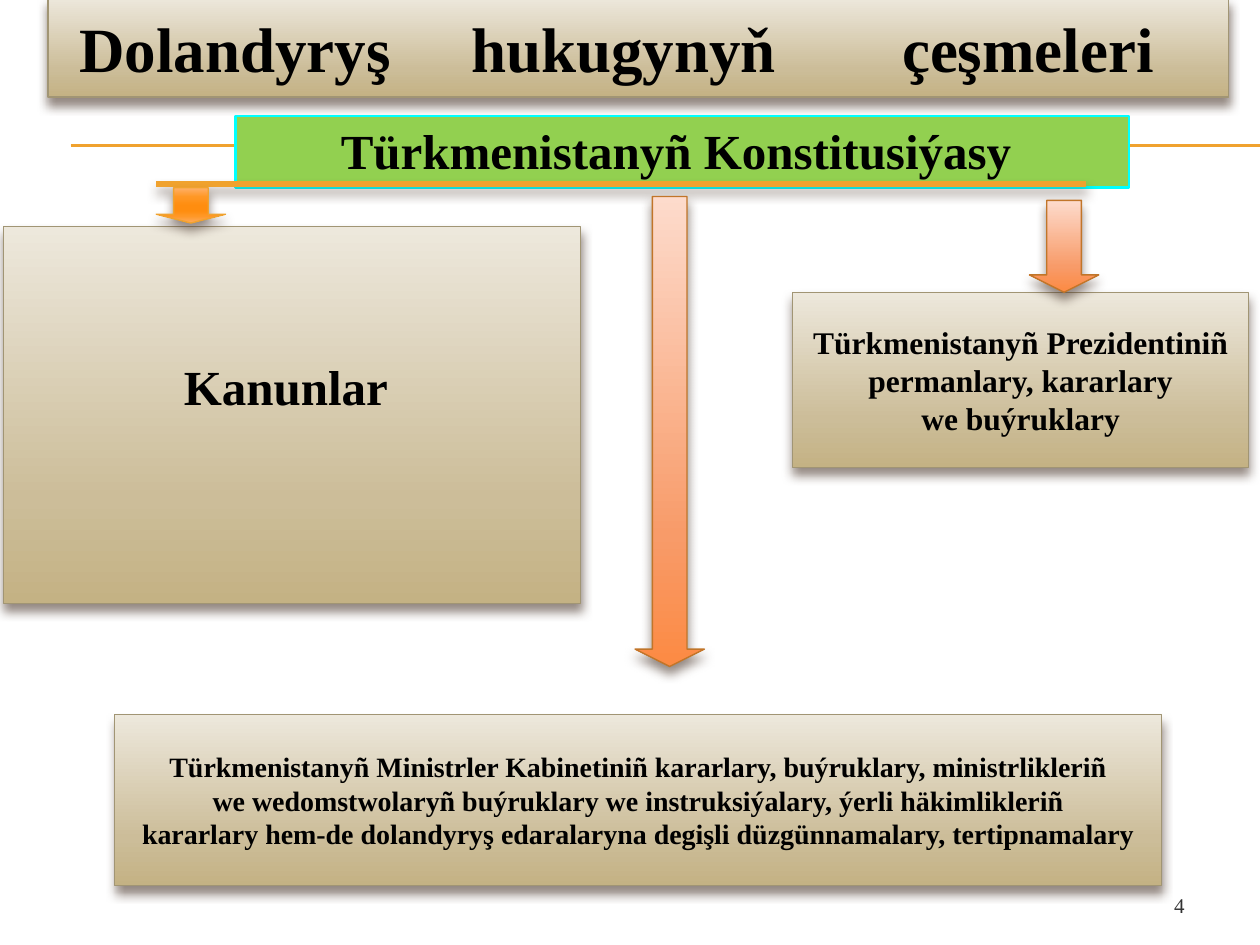
from lxml import etree
from pptx import Presentation
from pptx.dml.color import RGBColor
from pptx.enum import shapes, text
from pptx.oxml.ns import qn
from pptx.util import Inches, Pt

FONT = "Times New Roman"
COLORS = {"ink": "000000", "page": "333333", "gold": "F0A22E", "tan": "A19574",
          "rust": "C17529", "green": "92D050", "cyan": "00FFFF", "shade": "4E3B30"}
GRADS = {
    "sand": [(0, "EDE8DC"), (72, "CCBD99"), (100, "C4B284")],
    "peach": [(0, "FDDBCC"), (72, "F89B69"), (100, "FC8A43")],
    "amber": [(0, "FFB16A"), (25, "FF9826"), (50, "FF8D0F"),
              (65, "FF8D0F"), (80, "FF9724"), (100, "FFAA5C")],
}

TITLE = "Dolandyryş\thukugynyň\tçeşmeleri"
TITLE_BOX = (0.38, -0.02, 9.37, 0.79)
TABS = (3.11, 6.53)
HEAD = "Türkmenistanyñ Konstitusiýasy"
HEAD_BOX = (1.87, 0.92, 7.09, 0.57)
# place, size, right inset, bottom inset, lines
BOXES = [
    ((0.03, 1.8, 4.58, 2.99), 28, 0.2, 0.52, ["Kanunlar"]),
    ((6.29, 2.32, 3.62, 1.39), 18, 0.1, 0.05,
     ["Türkmenistanyñ Prezidentiniñ", "permanlary, kararlary", "we buýruklary"]),
    ((0.91, 5.67, 8.31, 1.36), 16, 0.1, 0.05,
     ["Türkmenistanyñ Ministrler Kabinetiniñ kararlary, buýruklary, ministrlikleriñ",
      "we wedomstwolaryñ buýruklary we instruksiýalary, ýerli häkimlikleriñ",
      "kararlary hem-de dolandyryş edaralaryna degişli düzgünnamalary, tertipnamalary"]),
]
# left, top, height, gradient, line colour
ARROWS = [(5.04, 1.56, 3.73, "peach", "rust"),
          (1.24, 1.49, 0.28, "amber", "gold"),
          (8.17, 1.59, 0.73, "peach", "rust")]
ARROW_W = 0.55
# start x, end x, y, width, shadow
RULES = [(0.56, 10, 1.15, 0.75, False), (0.56, 10, 1.16, 0.75, False)]
BAR = (1.24, 8.62, 1.46, 3, True)


def color(name):
    return RGBColor.from_string(COLORS[name])


def child(node, tag, **attrs):
    return etree.SubElement(node, qn(tag), {k: str(v) for k, v in attrs.items()})


def effect(shape, shadow):
    """Give the shape a soft shadow below it, or none."""
    props = shape._element.spPr
    for old in props.findall(qn("a:effectLst")):
        props.remove(old)
    node = child(props, "a:effectLst")
    if shadow:
        cast = child(node, "a:outerShdw", blurRad=Pt(6), dist=Pt(4),
                     dir=90 * 60000, rotWithShape=0)
        tint = child(cast, "a:srgbClr", val=COLORS["shade"])
        child(tint, "a:alpha", val=60000)


def outline(shape, name, width):
    shape.line.color.rgb = color(name)
    shape.line.width = Pt(width)


def shade(shape, grad, line):
    """Top-to-bottom gradient, thin outline and shadow."""
    shape.fill.gradient()
    shape.fill.gradient_angle = 270
    stops = shape._element.spPr.find(".//" + qn("a:gsLst"))
    for old in list(stops):
        stops.remove(old)
    for pos, rgb in GRADS[grad]:
        child(child(stops, "a:gs", pos=pos * 1000), "a:srgbClr", val=rgb)
    outline(shape, line, 0.79)
    effect(shape, True)


def write(shape, lines, size, align, anchor, bold=True, ink="ink", wrap=False):
    frame = shape.text_frame
    frame.auto_size = text.MSO_AUTO_SIZE.NONE
    frame.word_wrap = wrap
    frame.vertical_anchor = anchor
    for i, line in enumerate(lines):
        para = frame.add_paragraph() if i else frame.paragraphs[0]
        para.text = line
        para.alignment = align
        font = para.font
        font.name, font.size, font.bold = FONT, Pt(size), bold
        font.color.rgb = color(ink)
    return frame


def place(shape, box):
    shape.left, shape.top, shape.width, shape.height = map(Inches, box)


def add(slide, kind, box):
    return slide.shapes.add_shape(kind, *map(Inches, box))


def rule(slide, x1, x2, y, width, shadow):
    line = slide.shapes.add_connector(shapes.MSO_CONNECTOR.STRAIGHT,
                                      Inches(x1), Inches(y), Inches(x2), Inches(y))
    outline(line, "gold", width)
    effect(line, shadow)


def main():
    deck = Presentation()
    deck.slide_width, deck.slide_height = Inches(10), Inches(7.5)
    slide = deck.slides.add_slide(deck.slide_layouts[5])
    rect, down = shapes.MSO_SHAPE.RECTANGLE, shapes.MSO_SHAPE.DOWN_ARROW
    left, mid, right = text.PP_ALIGN.LEFT, text.PP_ALIGN.CENTER, text.PP_ALIGN.RIGHT
    top, center, base = (text.MSO_ANCHOR.TOP, text.MSO_ANCHOR.MIDDLE,
                         text.MSO_ANCHOR.BOTTOM)

    for line in RULES:
        rule(slide, *line)

    page = slide.shapes.add_textbox(*map(Inches, (8.94, 6.83, 0.56, 0.5)))
    write(page, ["4"], 12, right, base, bold=False, ink="page", wrap=True)

    title = slide.shapes.title
    place(title, TITLE_BOX)
    shade(title, "sand", "tan")
    frame = title.text_frame
    frame.margin_left = Inches(0.25)
    tabs = child(frame.paragraphs[0]._p.get_or_add_pPr(), "a:tabLst")
    for pos in TABS:
        child(tabs, "a:tab", pos=Inches(pos), algn="l")
    write(title, [TITLE], 36, left, center, wrap=True)

    head = add(slide, rect, HEAD_BOX)
    head.fill.solid()
    head.fill.fore_color.rgb = color("green")
    outline(head, "cyan", 1.5)
    effect(head, False)
    frame = write(head, [HEAD], 28, mid, top, wrap=True)
    frame.margin_top, frame.margin_bottom = Inches(0.04), 0
    frame.margin_right = Inches(0.2)

    rule(slide, *BAR)

    for box, size, side, foot, lines in BOXES:
        shape = add(slide, rect, box)
        shade(shape, "sand", "tan")
        frame = write(shape, lines, size, mid, center)
        frame.margin_right, frame.margin_bottom = Inches(side), Inches(foot)

    for x, y, height, grad, line in ARROWS:
        arrow = add(slide, down, (x, y, ARROW_W, height))
        arrow.adjustments[0], arrow.adjustments[1] = 0.5, 0.25
        shade(arrow, grad, line)

    deck.save("out.pptx")


if __name__ == "__main__":
    main()
